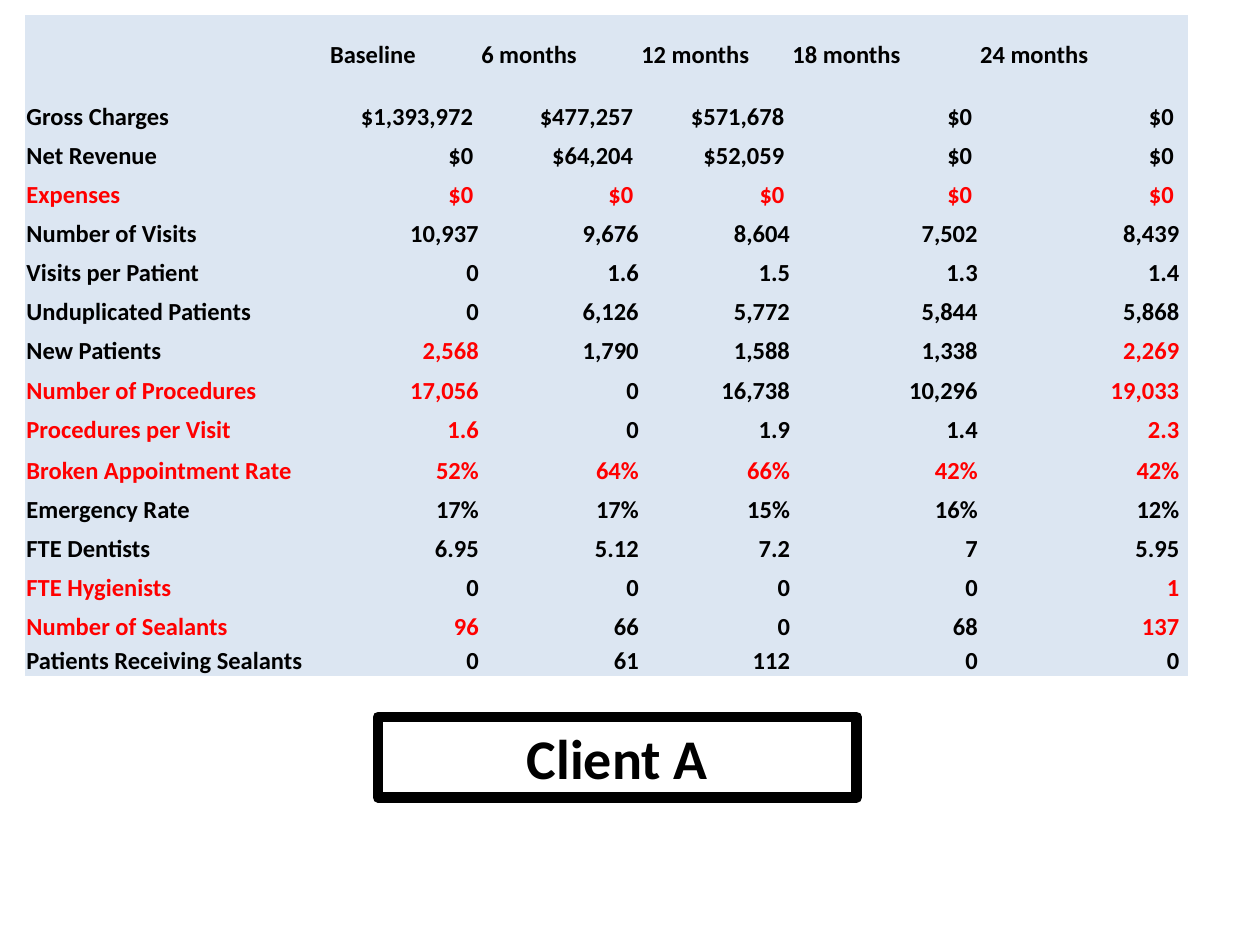
from pptx import Presentation
from pptx.dml.color import RGBColor
from pptx.enum.shapes import MSO_SHAPE as Shape
from pptx.enum.text import MSO_ANCHOR as Anchor, PP_ALIGN as Align
from pptx.oxml.ns import qn
from pptx.util import Inches, Pt

COLORS = {"text": "000000", "alert": "FF0000", "cell": "DCE6F2"}
FONT = "Calibri"
SIZE = 14
HEADER = ("", "Baseline", "6 months", "12 months", "18 months", "24 months")
ALL, ENDS, OUTER = range(6), (0, 1, 5), (1, 5)
ROWS = [
    (("Gross Charges", "$1,393,972 ", "$477,257 ", "$571,678 ", "$0 ", "$0 "), ()),
    (("Net Revenue", "$0 ", "$64,204 ", "$52,059 ", "$0 ", "$0 "), ()),
    (("Expenses", "$0 ", "$0 ", "$0 ", "$0 ", "$0 "), ALL),
    (("Number of Visits", "10,937", "9,676", "8,604", "7,502", "8,439"), ()),
    (("Visits per Patient", "0", "1.6", "1.5", "1.3", "1.4"), ()),
    (("Unduplicated Patients", "0", "6,126", "5,772", "5,844", "5,868"), ()),
    (("New Patients", "2,568", "1,790", "1,588", "1,338", "2,269"), OUTER),
    (("Number of Procedures", "17,056", "0", "16,738", "10,296", "19,033"), ENDS),
    (("Procedures per Visit", "1.6", "0", "1.9", "1.4", "2.3"), ENDS),
    (("Broken Appointment Rate", "52%", "64%", "66%", "42%", "42%"), ALL),
    (("Emergency Rate", "17%", "17%", "15%", "16%", "12%"), ()),
    (("FTE Dentists", "6.95", "5.12", "7.2", "7", "5.95"), ()),
    (("FTE Hygienists", "0", "0", "0", "0", "1"), (0, 5)),
    (("Number of Sealants", "96", "66", "0", "68", "137"), ENDS),
    (("Patients Receiving Sealants", "0", "61", "112", "0", "0"), ()),
]
COLS = (2.41, 1.2, 1.27, 1.2, 1.49, 1.6, 0.05)
HEIGHTS = [0.62] + [0.31] * 9 + [0.33] + [0.31] * 4 + [0.27]
NO_STYLE = "{2D5ABB26-0587-4C30-8999-92F81FD0307C}"


def rgb(name):
    return RGBColor.from_string(COLORS[name])


def write(p, text, size, color="text", align=Align.LEFT):
    p.text = text
    p.alignment = align
    for r in p.runs:
        r.font.name, r.font.size, r.font.bold = FONT, Pt(size), True
        r.font.color.rgb = rgb(color)


def add_metrics(slide):
    table = slide.shapes.add_table(
        len(HEIGHTS), len(COLS), Inches(0.2), Inches(0.12),
        Inches(sum(COLS)), Inches(sum(HEIGHTS))).table
    table.first_row = table.horz_banding = False
    table._tbl.tblPr.find(qn("a:tableStyleId")).text = NO_STYLE
    for col, width in zip(table.columns, COLS):
        col.width = Inches(width)
    for row, height in zip(table.rows, HEIGHTS):
        row.height = Inches(height)

    for i, (values, red) in enumerate([(HEADER, ())] + ROWS):
        for j, text in enumerate(values + ("",)):
            cell = table.cell(i, j)
            cell.fill.solid()
            cell.fill.fore_color.rgb = rgb("cell")
            cell.margin_left = cell.margin_right = cell.margin_top = Inches(0.01)
            cell.margin_bottom = 0
            cell.vertical_anchor = Anchor.BOTTOM if i else Anchor.MIDDLE
            p = cell.text_frame.paragraphs[0]
            write(p, text, SIZE, "alert" if j in red else "text",
                  Align.RIGHT if i and j else Align.LEFT)
            if not text:
                p._p.get_or_add_endParaRPr().set("sz", str(SIZE * 100))
    table.cell(0, 5).merge(table.cell(0, 6))


def add_client(slide):
    sp = slide.shapes.add_shape(
        Shape.RECTANGLE, Inches(3), Inches(5.69), Inches(3.8), Inches(0.64))
    sp.shadow.inherit = False
    sp.fill.background()
    sp.line.color.rgb = rgb("text")
    sp.line.width = Pt(6)
    tf = sp.text_frame
    tf.word_wrap = True
    tf.vertical_anchor = Anchor.TOP
    write(tf.paragraphs[0], "Client A", 32, align=Align.CENTER)


def main():
    prs = Presentation()
    prs.slide_width, prs.slide_height = Inches(10), Inches(7.5)
    slide = prs.slides.add_slide(prs.slide_layouts[6])
    add_metrics(slide)
    add_client(slide)
    prs.save("out.pptx")


if __name__ == "__main__":
    main()
